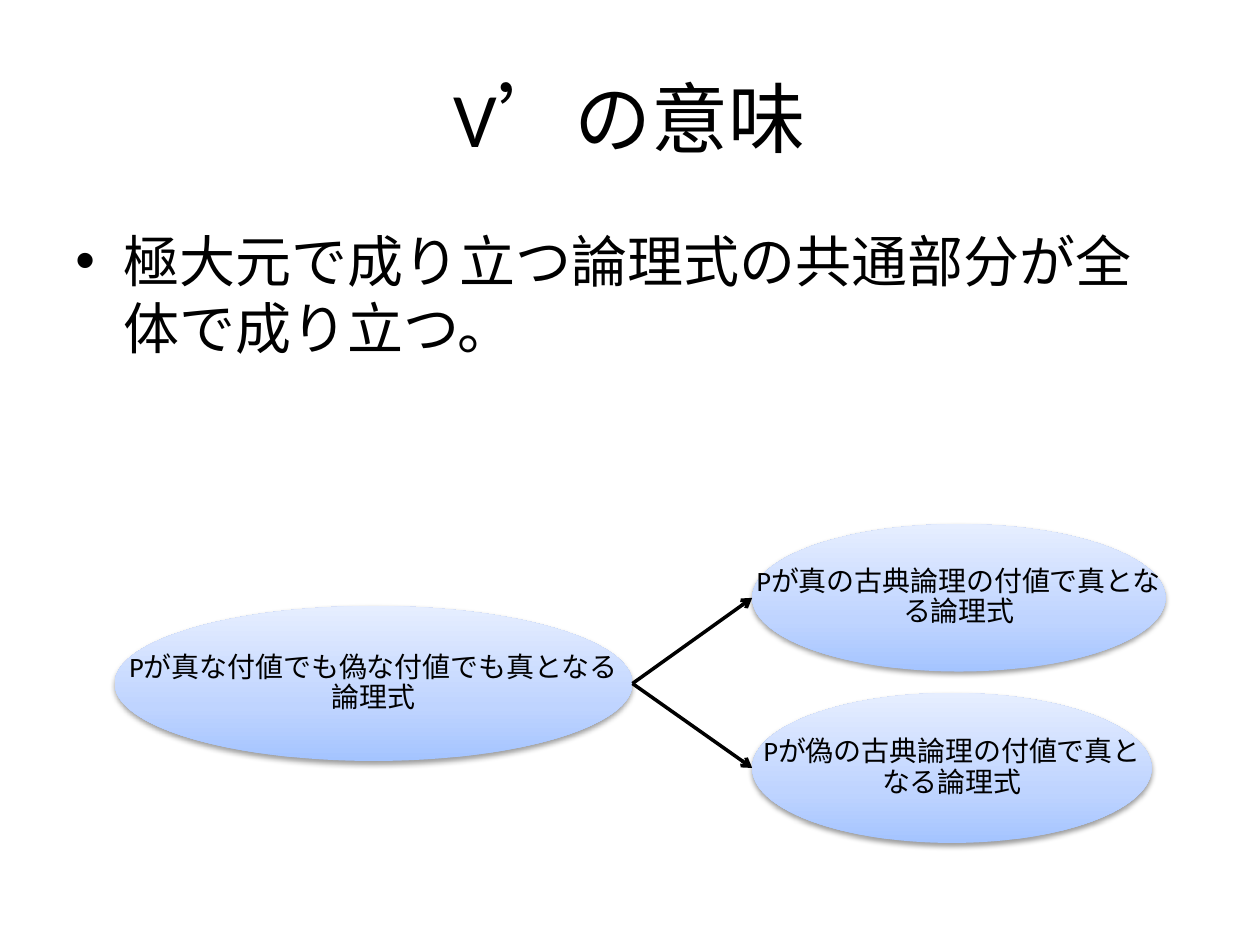
from lxml import etree
from pptx import Presentation
from pptx.dml.color import RGBColor
from pptx.enum.shapes import MSO_CONNECTOR, MSO_SHAPE
from pptx.enum.text import MSO_ANCHOR as ANCHOR, PP_ALIGN as ALIGN
from pptx.oxml import parse_xml
from pptx.oxml.ns import nsdecls, qn
from pptx.util import Inches, Pt

COLORS = {"ink": "000000", "bottom": "A4C4FF", "middle": "BFD4FF", "top": "E6EEFF"}

prs = Presentation()
prs.slide_width, prs.slide_height = Inches(10), Inches(7.5)
slide = prs.slides.add_slide(prs.slide_layouts[6])


def add_text(text, box, size, anchor=ANCHOR.MIDDLE, align=ALIGN.CENTER,
             inset=None, line_spacing=None, before=0, after=0):
    frame = slide.shapes.add_textbox(*map(Inches, box)).text_frame
    frame.word_wrap = True
    frame.vertical_anchor = anchor
    if inset is not None:
        frame.margin_left = frame.margin_right = Inches(inset)
        frame.margin_top = frame.margin_bottom = Inches(inset)
    para = frame.paragraphs[0]
    para.alignment = align
    para.line_spacing = line_spacing
    para.space_before, para.space_after = Pt(before), Pt(after)
    run = para.add_run()
    run.text = text
    run.font.name, run.font.size = "Calibri", Pt(size)
    run.font.color.rgb = RGBColor.from_string(COLORS["ink"])
    return para


# Title and bulleted statement
add_text("V’の意味", (0.5, 0.3, 9, 1.25), 44)
statement = add_text("極大元で成り立つ論理式の共通部分が全体で成り立つ。",
                     (0.5, 1.75, 9, 4.95), 32, anchor=ANCHOR.TOP,
                     align=ALIGN.LEFT, before=6.4)
bullet_props = statement._p.get_or_add_pPr()
bullet_props.set("marL", str(Inches(0.38)))
bullet_props.set("indent", str(Inches(-0.38)))
etree.SubElement(bullet_props, qn("a:buFont"), typeface="Arial")
etree.SubElement(bullet_props, qn("a:buChar"), char="•")

# Valuation nodes: the first is the root of the tree
nodes = [
    ("Pが真な付値でも偽な付値でも真となる論理式", (0.91, 4.81, 4.11, 1.23)),
    ("Pが真の古典論理の付値で真となる論理式", (5.97, 4.16, 3.28, 1.17)),
    ("Pが偽の古典論理の付値で真となる論理式", (5.97, 5.5, 3.17, 1.19)),
]
stops = [(0, "bottom"), (35, "middle"), (100, "top")]
for label, box in nodes:
    oval = slide.shapes.add_shape(MSO_SHAPE.OVAL, *map(Inches, box))
    oval.fill.gradient()
    oval.fill.gradient_angle = 90
    stop_list = oval._element.spPr.find(".//" + qn("a:gsLst"))
    for old_stop in list(stop_list):
        stop_list.remove(old_stop)
    for percent, name in stops:
        stop = etree.SubElement(stop_list, qn("a:gs"), pos=str(percent * 1000))
        etree.SubElement(stop, qn("a:srgbClr"), val=COLORS[name])
    oval.line.fill.background()
    oval.shadow.inherit = False
    oval._element.spPr.find(qn("a:effectLst")).append(parse_xml(
        f'<a:outerShdw {nsdecls("a")} blurRad="{Pt(3.1)}" dist="{Pt(1.6)}" '
        f'dir="5400000" rotWithShape="0"><a:srgbClr val="{COLORS["ink"]}">'
        '<a:alpha val="38000"/></a:srgbClr></a:outerShdw>'))
    add_text(label, box, 16, inset=0.01, line_spacing=0.9, after=5.6)

# Arrows from the root to each branch
root_left, root_top, root_width, root_height = nodes[0][1]
for label, (left, top, width, height) in nodes[1:]:
    ends = (root_left + root_width, root_top + root_height / 2, left, top + height / 2)
    arrow = slide.shapes.add_connector(MSO_CONNECTOR.STRAIGHT, *map(Inches, ends))
    arrow.line.width = Pt(2)
    arrow.line.color.rgb = RGBColor.from_string(COLORS["ink"])
    etree.SubElement(arrow.line._get_or_add_ln(), qn("a:tailEnd"), type="arrow")
    etree.SubElement(arrow._element.spPr, qn("a:effectLst"))

prs.save("out.pptx")
